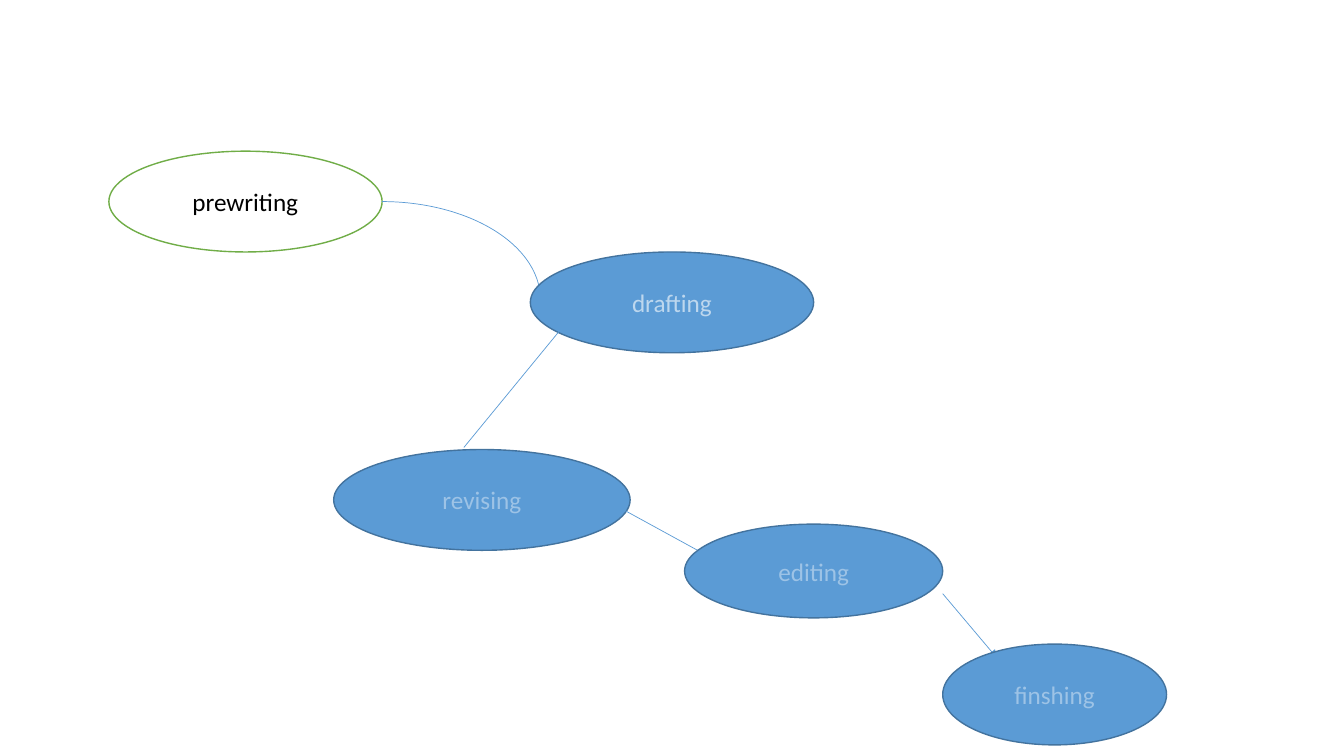
import pptx
import pptx.util
import pptx.dml.color
import pptx.enum.shapes
import pptx.enum.text
import pptx.oxml.ns
import lxml.etree

Inches = pptx.util.Inches
Kind = pptx.enum.shapes.MSO_SHAPE
HUES = {"white": "FFFFFF", "black": "000000", "green": "70AD47", "blue": "5B9BD5",
        "edge": "43739E", "pale": "BDD7EE", "light": "9DC3E6"}


def color(name):
    return pptx.dml.color.RGBColor.from_string(HUES[name])


def write(frame, text, hue="light", size=18, font="Calibri", align="CENTER", anchor="MIDDLE"):
    frame.word_wrap = True
    frame.vertical_anchor = getattr(pptx.enum.text.MSO_ANCHOR, anchor)
    para = frame.paragraphs[0]
    para.alignment = getattr(pptx.enum.text.PP_ALIGN, align)
    run = para.add_run()
    run.text = text
    run.font.name = font
    run.font.size = pptx.util.Pt(size)
    run.font.color.rgb = color(hue)


class Deck:
    """Holds the style and the current slide of the writing process."""

    def __init__(self):
        self.show = pptx.Presentation()
        self.show.slide_width = Inches(13.33)
        self.show.slide_height = Inches(7.5)
        self.slide = self.show.slides.add_slide(self.show.slide_layouts[6])
        self.thin = pptx.util.Pt(0.5)
        self.thick = pptx.util.Pt(1)

    def shape(self, kind, box, edge, width):
        item = self.slide.shapes.add_shape(kind, *map(Inches, box))
        item.shadow.inherit = False
        item.line.color.rgb = color(edge)
        item.line.width = width
        return item

    def oval(self, box, text="", fill="blue", edge="edge", hue="light"):
        item = self.shape(Kind.OVAL, box, edge, self.thick)
        item.fill.solid()
        item.fill.fore_color.rgb = color(fill)
        if text:
            write(item.text_frame, text, hue=hue)

    def arc(self, box):
        self.shape(Kind.ARC, box, "blue", self.thin).fill.background()

    def label(self, box, text):
        frame = self.slide.shapes.add_textbox(*map(Inches, box)).text_frame
        write(frame, text, hue="black", align="LEFT", anchor="TOP")

    def link(self, ends, arrow=False):
        item = self.slide.shapes.add_connector(
            pptx.enum.shapes.MSO_CONNECTOR.STRAIGHT, *map(Inches, ends))
        item.line.color.rgb = color("blue")
        item.line.width = self.thin
        qn = pptx.oxml.ns.qn
        if arrow:
            lxml.etree.SubElement(item.line._get_or_add_ln(), qn("a:tailEnd"), type="triangle")
        lxml.etree.SubElement(item._element.spPr, qn("a:effectLst"))


def main():
    deck = Deck()
    deck.oval((1.08, 1.5, 2.71, 1), fill="white", edge="green")
    deck.arc((2.22, 2, 3.14, 1.94))
    deck.label((1.81, 1.8, 1.26, 0.4), "prewriting")
    deck.oval((5.26, 2.5, 2.81, 1), "drafting", hue="pale")
    deck.link((5.56, 3.27, 4.6, 4.44))
    deck.oval((3.31, 4.46, 2.94, 1), "revising")
    deck.link((5.97, 4.94, 6.92, 5.46))
    deck.oval((6.79, 5.2, 2.56, 0.93), "editing")
    deck.link((9.35, 5.89, 9.89, 6.53), arrow=True)
    deck.oval((9.35, 6.39, 2.22, 1), "finshing")
    deck.show.save("out.pptx")


if __name__ == "__main__":
    main()
